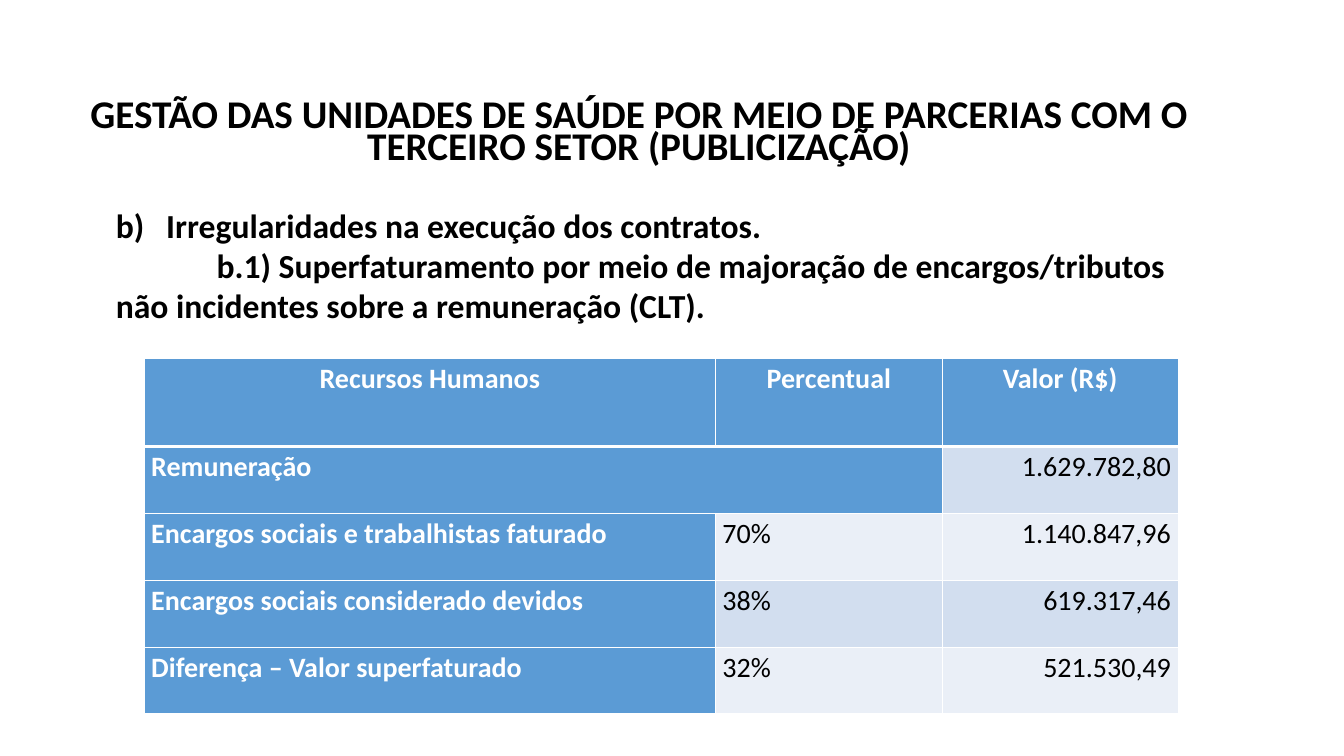
import pptx
import pptx.dml.color
import pptx.enum.text
import pptx.oxml
import pptx.oxml.ns
import pptx.util

RGBColor = pptx.dml.color.RGBColor
Align = pptx.enum.text.PP_ALIGN
BLACK = RGBColor(0x00, 0x00, 0x00)
WHITE = RGBColor(0xFF, 0xFF, 0xFF)
BLUE = RGBColor(0x5B, 0x9B, 0xD5)
BANDS = [RGBColor(0xEA, 0xEF, 0xF7), RGBColor(0xD2, 0xDE, 0xEF)]
NAMESPACE = pptx.oxml.ns.nsdecls("a")

deck = pptx.Presentation()
deck.slide_width = pptx.util.Inches(13.33)
deck.slide_height = pptx.util.Inches(7.5)
page = deck.slides.add_slide(deck.slide_layouts[6])
column = deck.slide_width / 100
row = deck.slide_height / 100


def add_box(left, top, width, height):
    box = page.shapes.add_textbox(
        int(left * column), int(top * row), int(width * column), int(height * row))
    box.text_frame.word_wrap = True
    return box.text_frame


def add_span(para, text, size, color, bold):
    span = para.add_run()
    span.text = text
    span.font.name = "Calibri"
    span.font.size = pptx.util.Pt(size)
    span.font.color.rgb = color
    span.font.bold = bold


title = add_box(3.15, 12.8, 88.75, 12.4).paragraphs[0]
title.alignment = Align.CENTER
title.line_spacing = 0.7
add_span(title, "GESTÃO DAS UNIDADES DE SAÚDE POR MEIO DE PARCERIAS COM O "
         "TERCEIRO SETOR (PUBLICIZAÇÃO)", 28, BLACK, True)

body = add_box(7.88, 23.73, 84, 21.3)
heading = body.paragraphs[0]
heading_format = heading._p.get_or_add_pPr()
heading_format.set("marL", str(pptx.util.Inches(0.5)))
heading_format.set("indent", str(pptx.util.Inches(-0.5)))
heading_format.append(pptx.oxml.parse_xml(
    f'<a:buAutoNum {NAMESPACE} type="alphaLcParenR" startAt="2"/>'))
heading.line_spacing = 1.5
add_span(heading, "Irregularidades na execução dos contratos.", 24, BLACK, True)

detail = body.add_paragraph()
detail._p.get_or_add_pPr().set("indent", str(pptx.util.Inches(1)))
add_span(detail, "b.1) Superfaturamento por meio de majoração de encargos/tributos",
         24, BLACK, True)
detail.add_line_break()
add_span(detail, "não incidentes sobre a remuneração (CLT).", 24, BLACK, True)

records = [
    ("Recursos Humanos", "Percentual", "Valor (R$)"),
    ("Remuneração", "", "1.629.782,80"),
    ("Encargos sociais e trabalhistas faturado", "70%", "1.140.847,96"),
    ("Encargos sociais considerado devidos", "38%", "619.317,46"),
    ("Diferença – Valor superfaturado", "32%", "521.530,49"),
]
column_shares = [42.5, 16.88, 17.55]
row_shares = [11.6] + [8.85] * 4

table = page.shapes.add_table(
    len(records), len(column_shares), int(10.73 * column), int(47.47 * row),
    int(sum(column_shares) * column), int(sum(row_shares) * row)).table
for index, share in enumerate(column_shares):
    table.columns[index].width = int(share * column)
for index, share in enumerate(row_shares):
    table.rows[index].height = int(share * row)
table.cell(1, 0).merge(table.cell(1, 1))

for line, record in enumerate(records):
    for place, text in enumerate(record):
        cell = table.cell(line, place)
        cell.margin_left = cell.margin_right = pptx.util.Inches(0.07)
        cell.margin_top = pptx.util.Inches(0.01)
        cell.margin_bottom = 0
        cell_format = cell._tc.get_or_add_tcPr()
        for side in "LRTB":
            thick = (line, side) in [(0, "B"), (1, "T")]
            width = pptx.util.Pt(3 if thick else 1)
            cell_format.append(pptx.oxml.parse_xml(
                f'<a:ln{side} {NAMESPACE} w="{width}"><a:solidFill>'
                f'<a:srgbClr val="{WHITE}"/></a:solidFill></a:ln{side}>'))
        strong = line == 0 or place == 0
        cell.fill.solid()
        cell.fill.fore_color.rgb = BLUE if strong else BANDS[line % 2]
        if text:
            para = cell.text_frame.paragraphs[0]
            para.alignment = (Align.CENTER if line == 0
                              else Align.RIGHT if place == 2 else Align.LEFT)
            para.line_spacing = 1.07
            para.space_after = pptx.util.Pt(8)
            add_span(para, text, 20, WHITE if strong else BLACK, strong)

deck.save("out.pptx")
